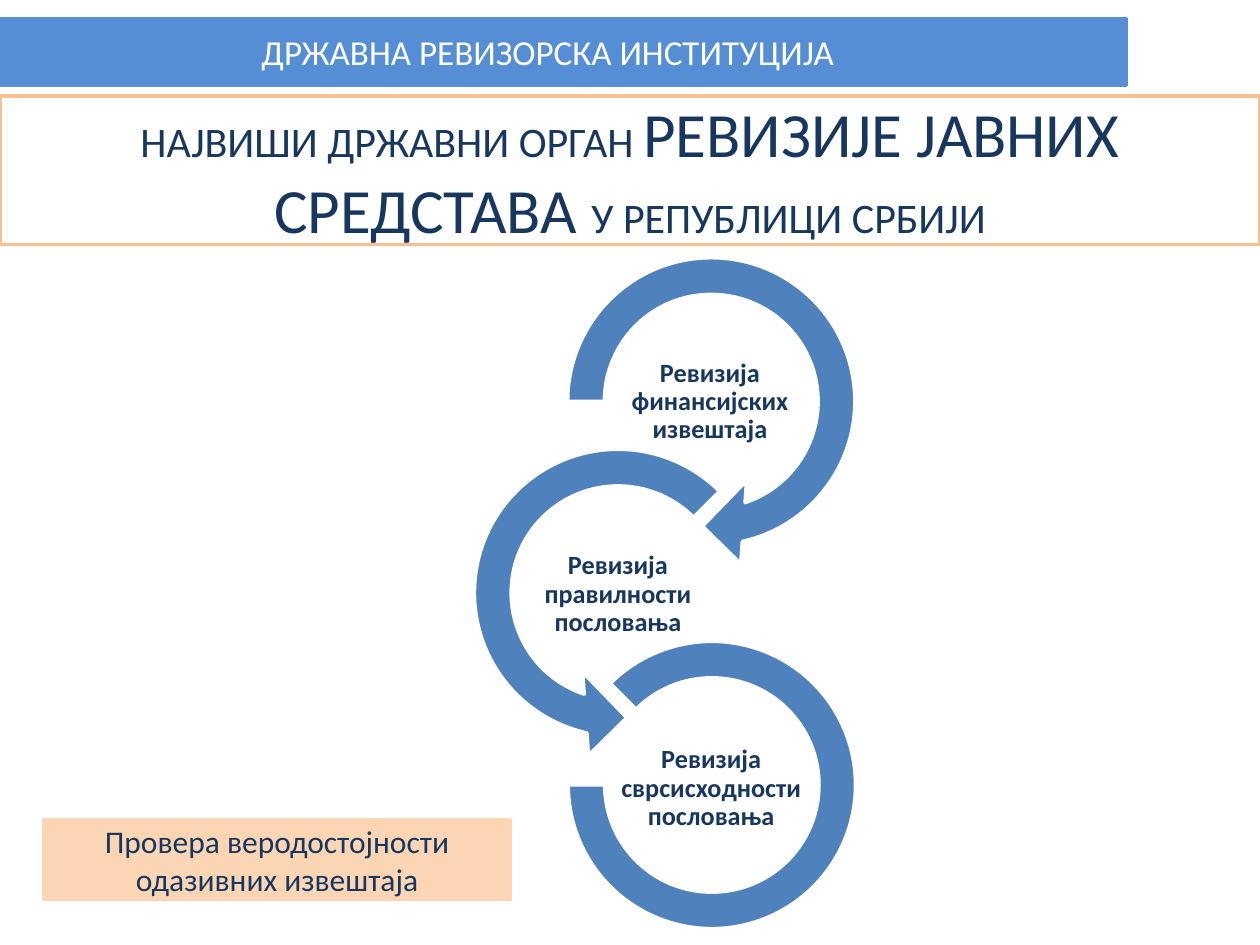
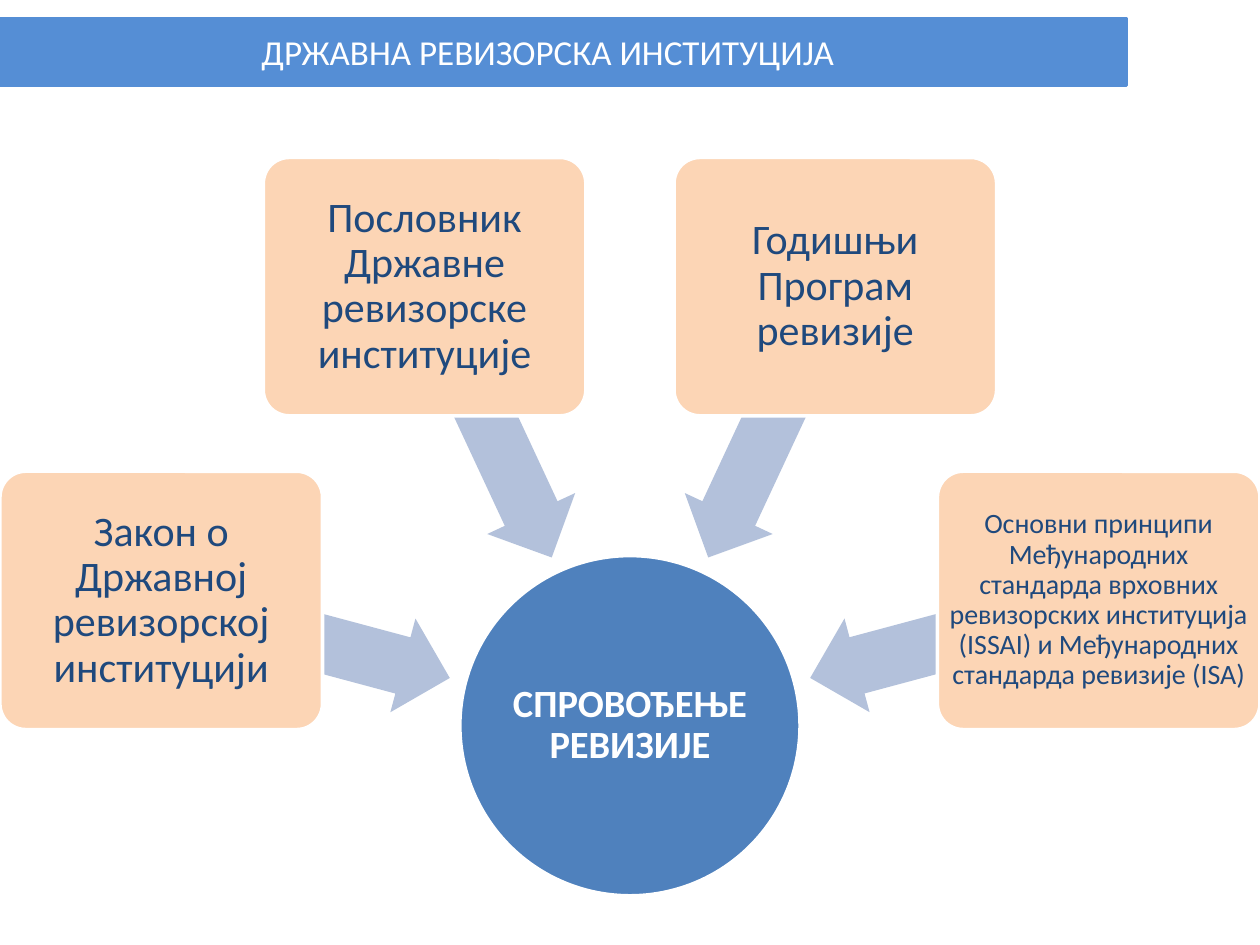
from math import cos, radians, sin

from pptx import Presentation
from pptx.dml.color import RGBColor
from pptx.enum.shapes import MSO_SHAPE
from pptx.enum.text import MSO_ANCHOR, PP_ALIGN
from pptx.util import Emu, Pt

RECT, ROUND, OVAL = MSO_SHAPE.RECTANGLE, MSO_SHAPE.ROUNDED_RECTANGLE, MSO_SHAPE.OVAL
ARROW, ARC = MSO_SHAPE.LEFT_ARROW, MSO_SHAPE.BLOCK_ARC
RIGHT_TURN, LEFT_TURN = MSO_SHAPE.CIRCULAR_ARROW, MSO_SHAPE.LEFT_CIRCULAR_ARROW
MIDDLE, CENTER = MSO_ANCHOR.MIDDLE, PP_ALIGN.CENTER

PX = 9144  # 100 px to the inch
FONT = "Calibri"
WHITE, BAND, BLUE = "FFFFFF", "558ED5", "4F81BD"
PEACH, ORANGE, PALE = "FCD5B5", "FAC090", "B3C1DB"
NAVY, INK = "17375E", "1F497D"

deck = Presentation()
deck.slide_width, deck.slide_height = Emu(1000 * PX), Emu(750 * PX)


def draw(slide, kind, box, fill, line=None, adj=()):
    shape = slide.shapes.add_shape(kind, *[Emu(round(v) * PX) for v in box])
    shape.shadow.inherit = False
    shape.fill.solid()
    shape.fill.fore_color.rgb = RGBColor.from_string(fill)
    if line:
        shape.line.color.rgb = RGBColor.from_string(line)
        shape.line.width = Pt(2)
    else:
        shape.line.fill.background()
    for i, value in enumerate(adj):
        shape.adjustments[i] = value
    return shape


def write(shape, *runs, color=NAVY, bold=False, space=None, inset=None):
    """Put (text, size) runs into a shape as one centred paragraph."""
    frame = shape.text_frame
    frame.word_wrap = True
    frame.vertical_anchor = MIDDLE
    if inset is not None:
        frame.margin_left = frame.margin_right = Emu(inset * PX)
        frame.margin_top = frame.margin_bottom = Emu(inset * PX)
    para = frame.paragraphs[0]
    para.alignment = CENTER
    if space:
        para.line_spacing = space
    for text, size in runs:
        run = para.add_run()
        run.text = text
        run.font.name, run.font.size, run.font.bold = FONT, Pt(size), bold
        run.font.color.rgb = RGBColor.from_string(color)


# Both slides: blue band with the title
pages = []
for _ in range(2):
    page = deck.slides.add_slide(deck.slide_layouts[6])
    draw(page, RECT, (0, 15, 894, 53), BAND, BAND)
    title = page.shapes.add_textbox(0, 15 * PX, 870 * PX, 52 * PX)
    write(title, ("ДРЖАВНА РЕВИЗОРСКА ИНСТИТУЦИЈА", 20), color=WHITE)
    pages.append(page)
first, second = pages

# Slide 1: chain of three audit types
links = [
    (RIGHT_TURN, (432, 186, 265, 265), (0.11, 11.42, 45, 108, 0.125),
     490, 282, "Ревизија финансијских извештаја"),
    (LEFT_TURN, (358, 338, 265, 265), (0.11, 11.42, 63, 189, 0.125),
     417, 435, "Ревизија правилности пословања"),
    (ARC, (451, 509, 228, 228), (135, 108, 0.127),
     491, 589, "Ревизија сврсисходности пословања"),
]
for kind, box, adj, left, top, text in links:
    draw(first, kind, box, BLUE, WHITE, adj)
    label = first.shapes.add_textbox(left * PX, top * PX, 147 * PX, 74 * PX)
    write(label, (text, 15), bold=True, space=0.9, inset=1)

# Slide 1: note and headline
note = draw(first, RECT, (35, 651, 370, 63), PEACH, PEACH)
write(note, ("Провера веродостојности одазивних извештаја", 18))
head = draw(first, RECT, (0, 76, 1000, 118), WHITE, ORANGE)
write(head, ("НАЈВИШИ ДРЖАВНИ ОРГАН ", 24), ("РЕВИЗИЈЕ ЈАВНИХ СРЕДСТАВА ", 36),
      ("У РЕПУБЛИЦИ СРБИЈИ", 24))

# Slide 2: hub
MID_X, MID_Y, HUB = 500, 576, 270
hub = draw(second, OVAL, (MID_X - HUB / 2, MID_Y - HUB / 2, HUB, HUB), BLUE, WHITE)
write(hub, ("СПРОВОЂЕЊЕ РЕВИЗИЈЕ", 22), color=WHITE, bold=True, space=0.9, inset=2)

# Slide 2: arrows and cards on two rings around the hub
cards = [
    ("Закон о Државној ревизорској институцији", 24, 5),
    ("Пословник Државне ревизорске институције", 24, 5),
    ("Годишњи Програм ревизије", 24, 5),
    ("Основни принципи Међународних стандарда врховних ревизорских институција "
     "(ISSAI) и Међународних стандарда ревизије (ISA)", 16, 3),
]
for i, (text, size, inset) in enumerate(cards):
    turn = 195 + 50 * i
    dx, dy = cos(radians(turn)), sin(radians(turn))
    arrow = draw(second, ARROW, (MID_X + 266 * dx - 118, MID_Y + 266 * dy - 38, 236, 77),
                 PALE, adj=(0.6, 0.5))
    arrow.rotation = turn
    card = draw(second, ROUND, (MID_X + 385 * dx - 128, MID_Y + 385 * dy - 102, 256, 205),
                PEACH, WHITE, (0.1,))
    write(card, (text, size), color=INK, space=0.9, inset=inset)

deck.save("out.pptx")
